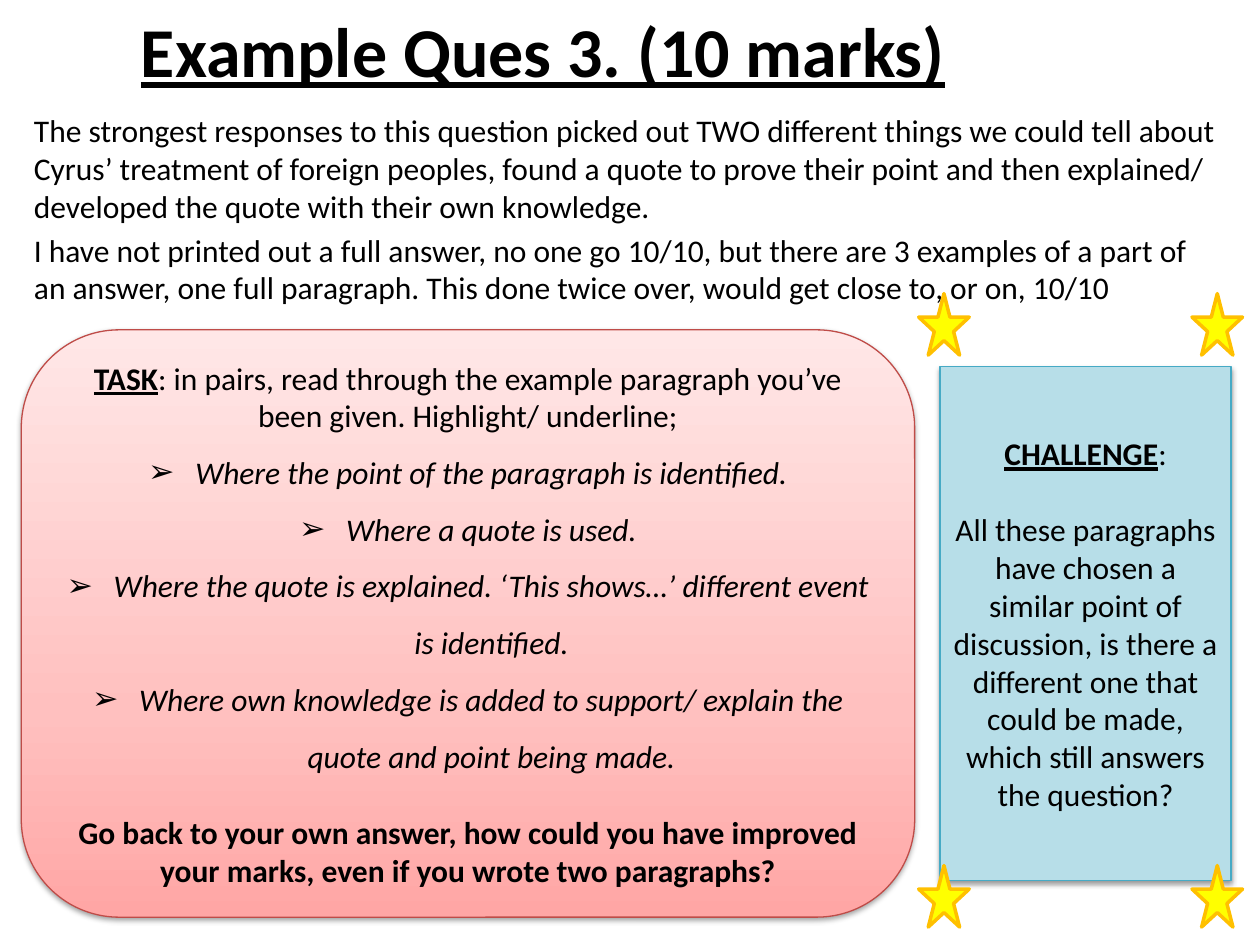
from dataclasses import dataclass
from itertools import product

from lxml import etree
from pptx import Presentation
from pptx import util as u
from pptx.dml.color import RGBColor
from pptx.enum import shapes, text
from pptx.oxml import ns

FONT = "Calibri"
BLACK = "000000"


@dataclass(frozen=True)
class Run:
    words: str
    bold: bool = False
    italic: bool = False
    underline: bool = False


@dataclass(frozen=True)
class Para:
    runs: tuple[Run, ...]
    before: float = 0
    bullet: str = ""
    line_spacing: float = 1.0


@dataclass(frozen=True)
class Box:
    left: float
    top: float
    width: float
    height: float

    def lengths(self) -> tuple:
        return tuple(u.Cm(v) for v in (self.left, self.top, self.width, self.height))


def colour(hex_code: str) -> RGBColor:
    return RGBColor.from_string(hex_code)


def add_element(parent, tag: str, **attributes):
    return etree.SubElement(parent, ns.qn(tag), attributes)


def write(frame, paras, size: float, align, anchor) -> None:
    frame.word_wrap = True
    frame.auto_size = text.MSO_AUTO_SIZE.NONE
    frame.vertical_anchor = anchor
    for index, para in enumerate(paras):
        paragraph = frame.paragraphs[0] if index == 0 else frame.add_paragraph()
        paragraph.alignment = align
        paragraph.space_before = u.Pt(para.before)
        paragraph.line_spacing = para.line_spacing
        properties = paragraph._p.get_or_add_pPr()
        indent = u.Cm(0.95) if para.bullet else 0
        properties.set("marL", str(indent))
        properties.set("indent", str(-indent))
        if para.bullet:
            add_element(properties, "a:buFont", typeface=FONT)
            add_element(properties, "a:buChar", char=para.bullet)
        else:
            add_element(properties, "a:buNone")
        for part in para.runs:
            run = paragraph.add_run()
            run.text = part.words
            font = run.font
            font.name, font.size = FONT, u.Pt(size)
            font.bold, font.italic, font.underline = part.bold, part.italic, part.underline
            font.color.rgb = colour(BLACK)


def fill_placeholder(placeholder, box: Box, paras, size: float, align, anchor) -> None:
    placeholder.left, placeholder.top, placeholder.width, placeholder.height = box.lengths()
    write(placeholder.text_frame, paras, size, align, anchor)


def add_panel(slide, kind, box: Box, fill: str, line: str, weight: float):
    panel = slide.shapes.add_shape(kind, *box.lengths())
    panel.shadow.inherit = False
    panel.fill.solid()
    panel.fill.fore_color.rgb = colour(fill)
    panel.line.color.rgb = colour(line)
    panel.line.width = u.Pt(weight)
    return panel


def add_shadow(panel) -> None:
    effects = panel._element.spPr.find(ns.qn("a:effectLst"))
    shadow = add_element(effects, "a:outerShdw", blurRad=str(u.Pt(3.1)), dist=str(u.Pt(1.6)),
                         dir="5400000", rotWithShape="0")
    add_element(add_element(shadow, "a:srgbClr", val=BLACK), "a:alpha", val="38000")


def shade_upwards(panel, stops: dict[int, str]) -> None:
    panel.fill.gradient()
    panel.fill.gradient_angle = 90
    stop_list = panel._element.spPr.find(ns.qn("a:gradFill")).find(ns.qn("a:gsLst"))
    for stop in list(stop_list):
        stop_list.remove(stop)
    for percent, hex_code in stops.items():
        stop = add_element(stop_list, "a:gs", pos=str(percent * 1000))
        add_element(stop, "a:srgbClr", val=hex_code)


HEADING = (Para((Run("Example Ques 3. (10 marks)", bold=True, underline=True),)),)
FEEDBACK = tuple(Para((Run(words),), before=3.6) for words in (
    "The strongest responses to this question picked out TWO different things we could tell "
    "about Cyrus’ treatment of foreign peoples, found a quote to prove their point and then "
    "explained/ developed the quote with their own knowledge.",
    "I have not printed out a full answer, no one go 10/10, but there are 3 examples of a part "
    "of an answer, one full paragraph. This done twice over, would get close to, or on, 10/10",
))
CHECKLIST = tuple(Para((Run(words, italic=True),), bullet="➢", line_spacing=1.5) for words in (
    "Where the point of the paragraph is identified.",
    "Where a quote is used.",
    "Where the quote is explained. ‘This shows…’ different event is identified.",
    "Where own knowledge is added to support/ explain the quote and point being made.",
))
TASK = (
    Para((Run("TASK", bold=True, underline=True),
          Run(": in pairs, read through the example paragraph you’ve been given. "
              "Highlight/ underline;"))),
    *CHECKLIST,
    Para((Run("Go back to your own answer, how could you have improved your marks, even if you "
              "wrote two paragraphs?", bold=True),), before=22),
)
CHALLENGE = (
    Para((Run("CHALLENGE", bold=True, underline=True), Run(":"))),
    Para((Run("All these paragraphs have chosen a similar point of discussion, is there a "
              "different one that could be made, which still answers the question?"),), before=22),
)


def main() -> None:
    deck = Presentation()
    deck.slide_width, deck.slide_height = u.Cm(25.4), u.Cm(19.05)
    slide = deck.slides.add_slide(deck.slide_layouts[1])
    centre, left = text.PP_ALIGN.CENTER, text.PP_ALIGN.LEFT
    middle, top = text.MSO_ANCHOR.MIDDLE, text.MSO_ANCHOR.TOP
    preset = shapes.MSO_SHAPE

    fill_placeholder(slide.shapes.title, Box(0, 0, 21.89, 2.01), HEADING, 40, centre, middle)
    fill_placeholder(slide.placeholders[1], Box(0.43, 2.11, 24.38, 12.09), FEEDBACK, 18, left, top)

    task = add_panel(slide, preset.ROUNDED_RECTANGLE, Box(0.43, 6.65, 18.01, 11.84),
                     "FFC0BF", "BF4C48", 0.75)
    shade_upwards(task, {0: "FFA6A5", 35: "FFC0BF", 100: "FFE7E7"})
    challenge = add_panel(slide, preset.RECTANGLE, Box(18.95, 7.39, 5.87, 10.36),
                          "B7DEE8", "46AAC5", 0.75)
    for panel, paras in ((task, TASK), (challenge, CHALLENGE)):
        add_shadow(panel)
        write(panel.text_frame, paras, 18, centre, middle)

    for star_left, star_top in product((24.03, 18.52), (17.45, 5.92)):
        add_panel(slide, preset.STAR_5_POINT, Box(star_left, star_top, 1.02, 1.24),
                  "FFFF00", "FFC000", 2)

    deck.save("out.pptx")


if __name__ == "__main__":
    main()
